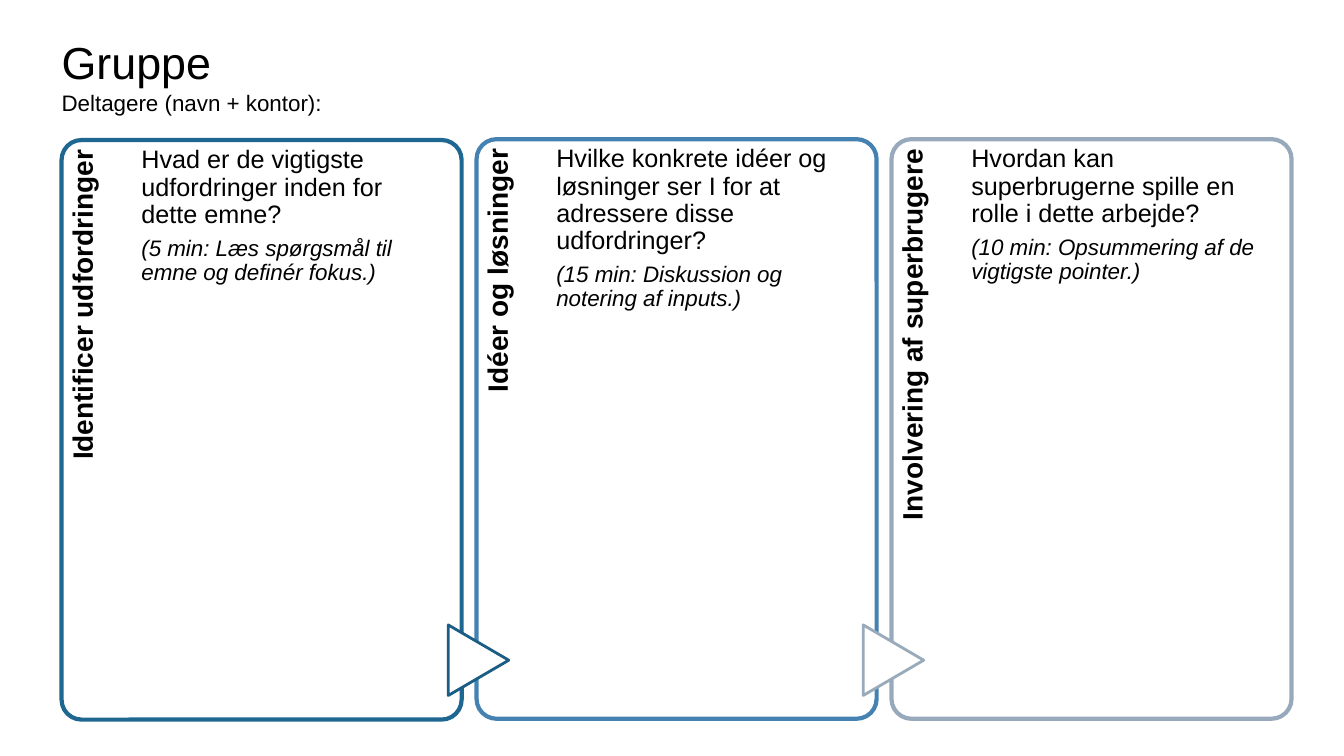
from pptx import Presentation
from pptx.dml.color import RGBColor
from pptx.enum.shapes import MSO_SHAPE
from pptx.enum.text import MSO_ANCHOR, MSO_AUTO_SIZE, PP_ALIGN
from pptx.util import Pt

ROUNDED = MSO_SHAPE.ROUNDED_RECTANGLE
TRIANGLE = MSO_SHAPE.FLOWCHART_EXTRACT
TOP, BOTTOM = MSO_ANCHOR.TOP, MSO_ANCHOR.BOTTOM
LEFT, RIGHT = PP_ALIGN.LEFT, PP_ALIGN.RIGHT
NO_AUTOFIT = MSO_AUTO_SIZE.NONE

FONT = "Arial"
BLACK, WHITE = "000000", "FFFFFF"
FIRST_LEFT, PITCH = 44, 296.4
PANEL_WIDTH, PANEL_HEIGHT = 285.8, 414
LABEL_LENGTH, LABEL_DEPTH = 340, 57
QUESTION_WIDTH = 213
ARROW_WIDTH, ARROW_HEIGHT = 50.4, 43.2
ARROW_MIDDLE = 471.6

# top, panel fill, panel line, incoming arrow line, label, question, timing
STEPS = [
    (100, WHITE, "1E6791", None, "Identificer udfordringer",
     "Hvad er de vigtigste udfordringer inden for dette emne?",
     "(5 min: Læs spørgsmål til emne og definér fokus.)"),
    (99.4, None, "4582B2", "1B5D84", "Idéer og løsninger",
     "Hvilke konkrete idéer og løsninger ser I for at adressere disse udfordringer?",
     "(15 min: Diskussion og notering af inputs.)"),
    (99.4, None, "97A9BB", "99AABB", "Involvering af superbrugere",
     "Hvordan kan superbrugerne spille en rolle i dette arbejde?",
     "(10 min: Opsummering af de vigtigste pointer.)"),
]


def color(hex_string):
    return RGBColor.from_string(hex_string)


def format_run(run, size, bold=False, italic=False):
    run.font.name = FONT
    run.font.size = Pt(size)
    run.font.bold = bold
    run.font.italic = italic
    run.font.color.rgb = color(BLACK)


def set_margins(frame, left, top, right, bottom):
    frame.margin_left, frame.margin_top = Pt(left), Pt(top)
    frame.margin_right, frame.margin_bottom = Pt(right), Pt(bottom)


def add_title(slide, heading, subheading):
    title = slide.shapes.title
    title.left, title.top, title.width, title.height = Pt(44), Pt(21.6), Pt(878.4), Pt(64)
    frame = title.text_frame
    frame.auto_size = NO_AUTOFIT
    frame.vertical_anchor = BOTTOM
    set_margins(frame, 0, 3, 6.5, 3)
    frame.text = f"{heading}\v{subheading}"
    paragraph = frame.paragraphs[0]
    paragraph.alignment = LEFT
    for run, size in zip(paragraph.runs, (32, 16)):
        format_run(run, size)


def add_outline(slide, preset, left, top, width, height, fill, line, line_width):
    outline = slide.shapes.add_shape(preset, Pt(left), Pt(top), Pt(width), Pt(height))
    outline.shadow.inherit = False
    if fill:
        outline.fill.solid()
        outline.fill.fore_color.rgb = color(fill)
    else:
        outline.fill.background()
    outline.line.color.rgb = color(line)
    outline.line.width = Pt(line_width)
    return outline


def add_text(slide, left, top, width, height, lines, alignment=LEFT, right_margin=0):
    """Add a text box; each line is (text, size, bold, italic)."""
    box = slide.shapes.add_textbox(Pt(left), Pt(top), Pt(width), Pt(height))
    frame = box.text_frame
    frame.word_wrap = True
    frame.vertical_anchor = TOP
    set_margins(frame, 0, 5, right_margin, 0)
    frame.text = "\n".join(text for text, *_ in lines)
    for paragraph, (_, size, bold, italic) in zip(frame.paragraphs, lines):
        paragraph.alignment = alignment
        paragraph.line_spacing = 0.9
        paragraph.space_after = Pt(6)
        format_run(paragraph.runs[0], size, bold, italic)
    return box


def add_step(slide, left, step):
    top, fill, line, arrow_line, label, question, timing = step
    panel = add_outline(slide, ROUNDED, left, top, PANEL_WIDTH, PANEL_HEIGHT, fill, line, 3)
    panel.adjustments[0] = 0.05

    # The label turns about its centre, so it is placed from that centre.
    side_label = add_text(
        slide, left + (LABEL_DEPTH - LABEL_LENGTH) / 2,
        top + (LABEL_LENGTH - LABEL_DEPTH) / 2, LABEL_LENGTH, LABEL_DEPTH,
        [(label, 20, True, False)], RIGHT, 7)
    side_label.rotation = 270

    if arrow_line:
        arrow = add_outline(
            slide, TRIANGLE, left + 1.4 - ARROW_WIDTH / 2, ARROW_MIDDLE - ARROW_HEIGHT / 2,
            ARROW_WIDTH, ARROW_HEIGHT, WHITE, arrow_line, 2)
        arrow.rotation = 90

    add_text(slide, left + LABEL_DEPTH, top, QUESTION_WIDTH, PANEL_HEIGHT,
             [(question, 18, False, False), (timing, 16, False, True)])


def main():
    presentation = Presentation()
    presentation.slide_width, presentation.slide_height = Pt(960), Pt(540)
    slide = presentation.slides.add_slide(presentation.slide_layouts[5])
    add_title(slide, "Gruppe", "Deltagere (navn + kontor):")
    for index, step in enumerate(STEPS):
        add_step(slide, FIRST_LEFT + index * PITCH, step)
    presentation.save("out.pptx")


if __name__ == "__main__":
    main()
